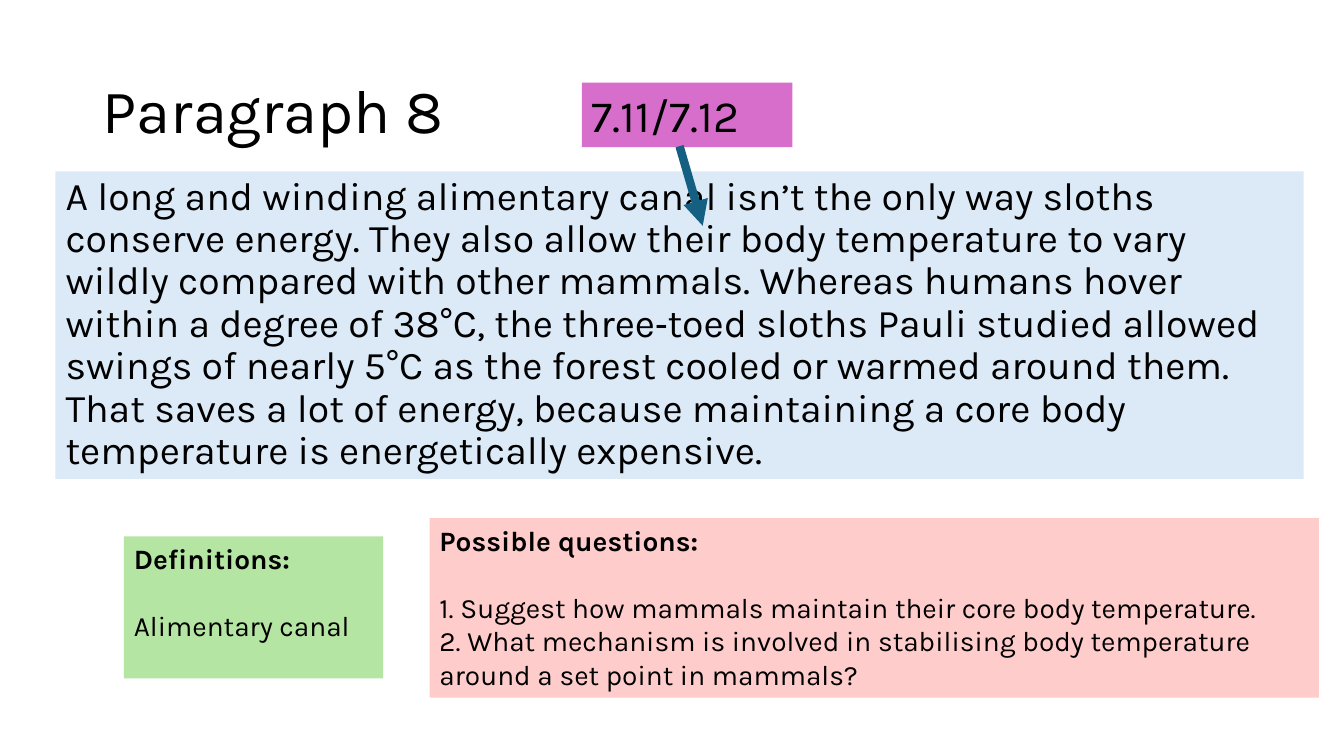
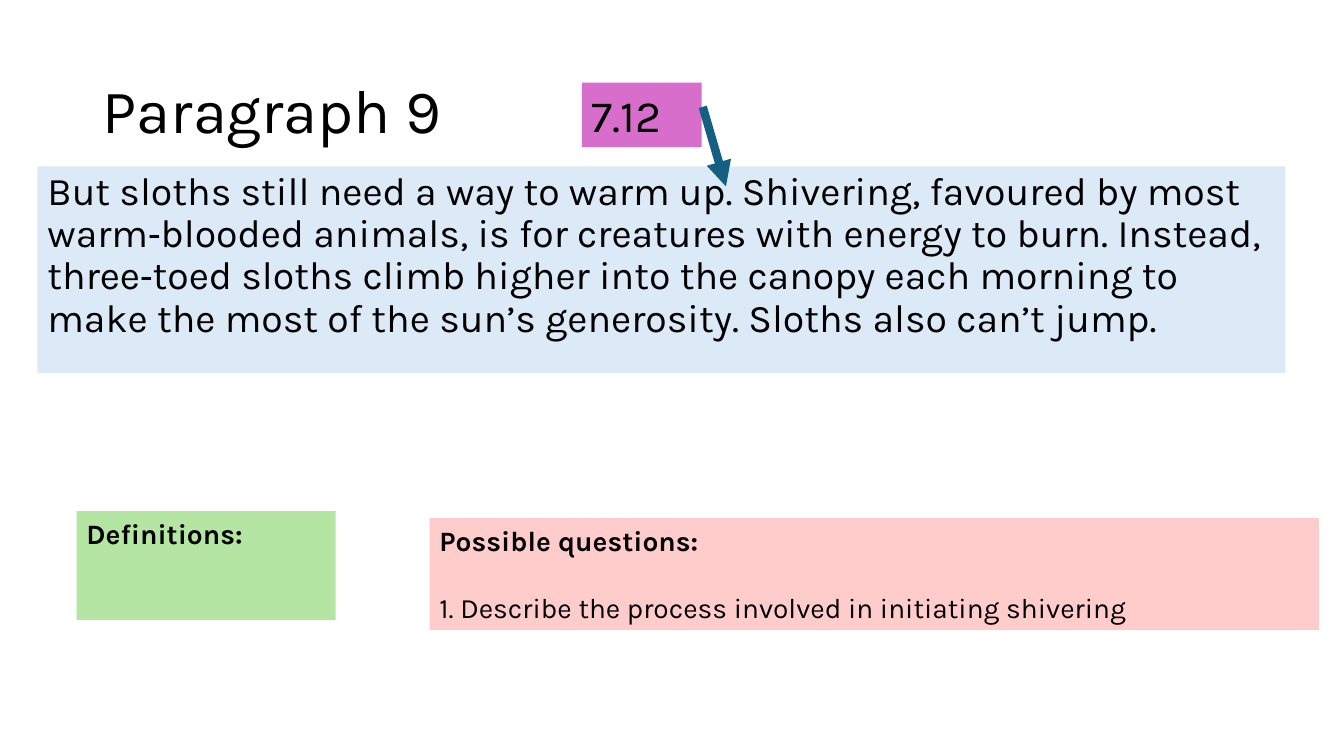
import pptx
import pptx.util
import pptx.dml.color
import pptx.enum.shapes
import pptx.enum.text
import pptx.oxml

Inches = pptx.util.Inches
Pt = pptx.util.Pt

FONT = "Karla"
BLACK = "000000"
BLUE = "DCEAF7"
GREEN = "B4E5A2"
PURPLE = "D86ECC"
PINK = "FFCCCC"
TEAL = "156082"
HEADING_GAP = 24


def color(value):
    return pptx.dml.color.RGBColor.from_string(value)


def write(shape, lines, size, fill=None, anchor="TOP", heading=False, spacing=1.0, before=0):
    if fill:
        shape.fill.solid()
        shape.fill.fore_color.rgb = color(fill)
    frame = shape.text_frame
    frame.word_wrap = True
    frame.auto_size = pptx.enum.text.MSO_AUTO_SIZE.NONE
    frame.vertical_anchor = pptx.enum.text.MSO_ANCHOR[anchor]
    for index, line in enumerate(lines):
        para = frame.add_paragraph() if index else frame.paragraphs[0]
        para.alignment = pptx.enum.text.PP_ALIGN.LEFT
        para.line_spacing = spacing
        para.space_before = Pt(before)
        is_heading = heading and index == 0
        para.space_after = Pt(HEADING_GAP if is_heading and len(lines) > 1 else 0)
        span = para.add_run()
        span.text = line
        span.font.name = FONT
        span.font.size = Pt(size)
        span.font.bold = is_heading
        span.font.color.rgb = color(BLACK)


slides = [
    {
        "title": "Paragraph 8",
        "passage": "A long and winding alimentary canal isn’t the only way sloths conserve energy. "
                   "They also allow their body temperature to vary wildly compared with other mammals. "
                   "Whereas humans hover within a degree of 38°C, the three‑toed sloths Pauli studied "
                   "allowed swings of nearly 5°C as the forest cooled or warmed around them. "
                   "That saves a lot of energy, because maintaining a core body temperature is "
                   "energetically expensive.",
        "passage_at": (0.55, 1.7, 12.38, 3.05),
        "definitions": ["Alimentary canal"],
        "definitions_at": (1.23, 5.32, 2.57, 1.41),
        "reference": "7.11/7.12",
        "reference_width": 2.09,
        "arrow_from": (6.74, 1.45),
        "questions": [
            "1. Suggest how mammals maintain their core body temperature.",
            "2. What mechanism is involved in stabilising body temperature around a set point in mammals?",
        ],
        "questions_height": 1.78,
    },
    {
        "title": "Paragraph 9",
        "passage": "But sloths still need a way to warm up. Shivering, favoured by most warm‑blooded "
                   "animals, is for creatures with energy to burn. Instead, three‑toed sloths climb "
                   "higher into the canopy each morning to make the most of the sun’s generosity. "
                   "Sloths also can’t jump.",
        "passage_at": (0.37, 1.65, 12.38, 2.05),
        "definitions": [],
        "definitions_at": (0.76, 5.07, 2.57, 1.08),
        "reference": "7.12",
        "reference_width": 1.19,
        "arrow_from": (6.97, 1.06),
        "questions": ["1. Describe the process involved in initiating shivering"],
        "questions_height": 1.11,
    },
]

deck = pptx.Presentation()
deck.slide_width = Inches(13.33)
deck.slide_height = Inches(7.5)

for content in slides:
    page = deck.slides.add_slide(deck.slide_layouts[1])

    title = page.shapes.title
    title.left, title.top, title.width, title.height = map(Inches, (0.92, 0.4, 11.5, 1.45))
    write(title, [content["title"]], 44, anchor="MIDDLE", spacing=0.9)

    passage = page.placeholders[1]
    passage.left, passage.top, passage.width, passage.height = map(Inches, content["passage_at"])
    write(passage, [content["passage"]], 28, fill=BLUE, spacing=0.9, before=10)
    properties = passage.text_frame.paragraphs[0].runs[0].font
    for para in passage.text_frame.paragraphs:
        properties = para._p.get_or_add_pPr()
        properties.set("marL", "0")
        properties.set("indent", "0")
        properties.append(pptx.oxml.parse_xml(
            '<a:buNone xmlns:a="http://schemas.openxmlformats.org/drawingml/2006/main"/>'))

    definitions = page.shapes.add_textbox(*map(Inches, content["definitions_at"]))
    write(definitions, ["Definitions:"] + content["definitions"], 20, fill=GREEN, heading=True)

    reference = page.shapes.add_textbox(
        *map(Inches, (5.77, 0.82, content["reference_width"], 0.64)))
    write(reference, [content["reference"]], 32, fill=PURPLE)

    left, top = content["arrow_from"]
    arrow = page.shapes.add_connector(
        pptx.enum.shapes.MSO_CONNECTOR.STRAIGHT,
        *map(Inches, (left, top, left + 0.23, top + 0.79)))
    arrow.line.color.rgb = color(TEAL)
    arrow.line.width = Pt(6)
    arrow.line._get_or_add_ln().append(pptx.oxml.parse_xml(
        '<a:tailEnd xmlns:a="http://schemas.openxmlformats.org/drawingml/2006/main" type="triangle"/>'))
    arrow._element.spPr.append(pptx.oxml.parse_xml(
        '<a:effectLst xmlns:a="http://schemas.openxmlformats.org/drawingml/2006/main"/>'))

    questions = page.shapes.add_textbox(
        *map(Inches, (4.26, 5.14, 8.82, content["questions_height"])))
    write(questions, ["Possible questions:"] + content["questions"], 20, fill=PINK, heading=True)

deck.save("out.pptx")
